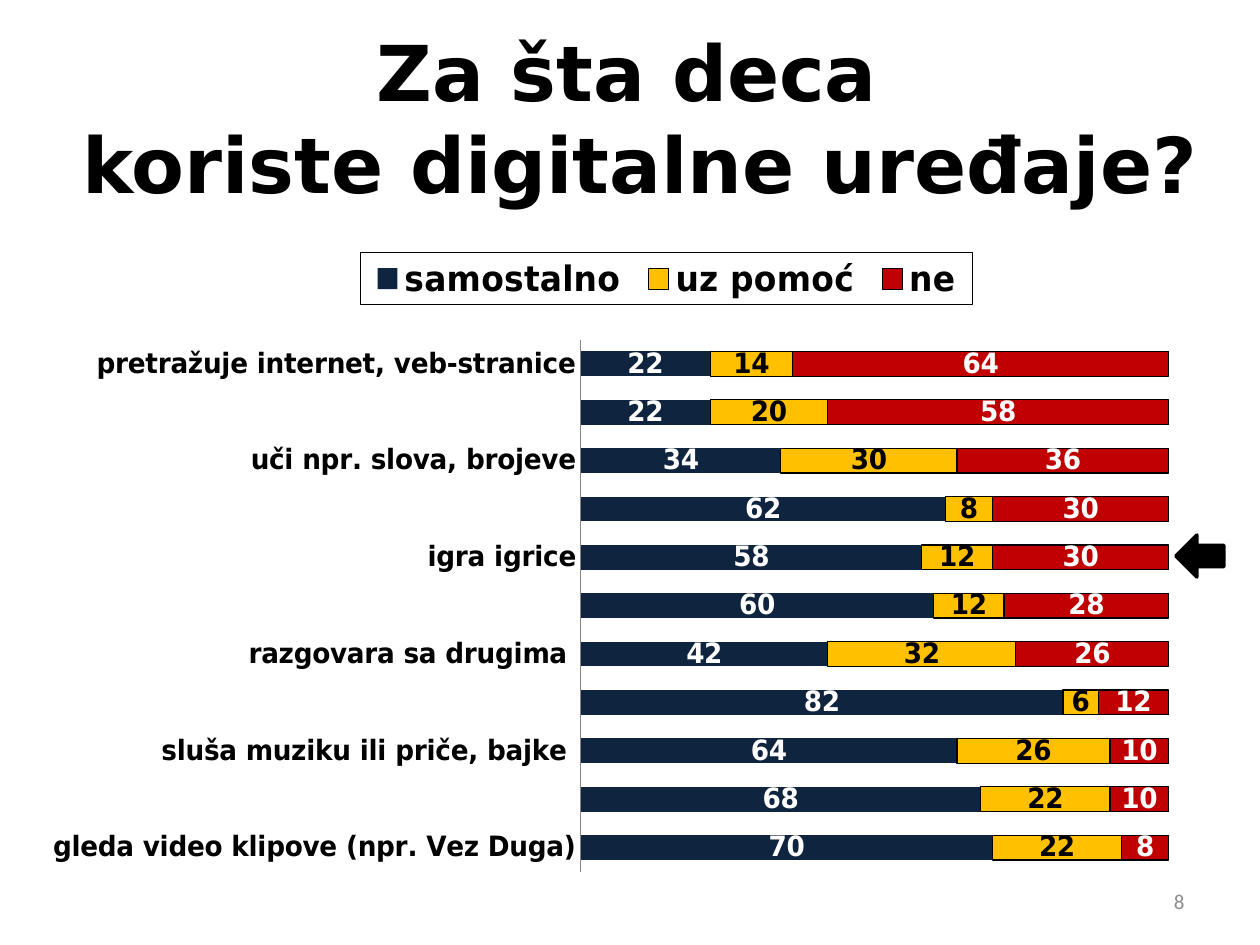
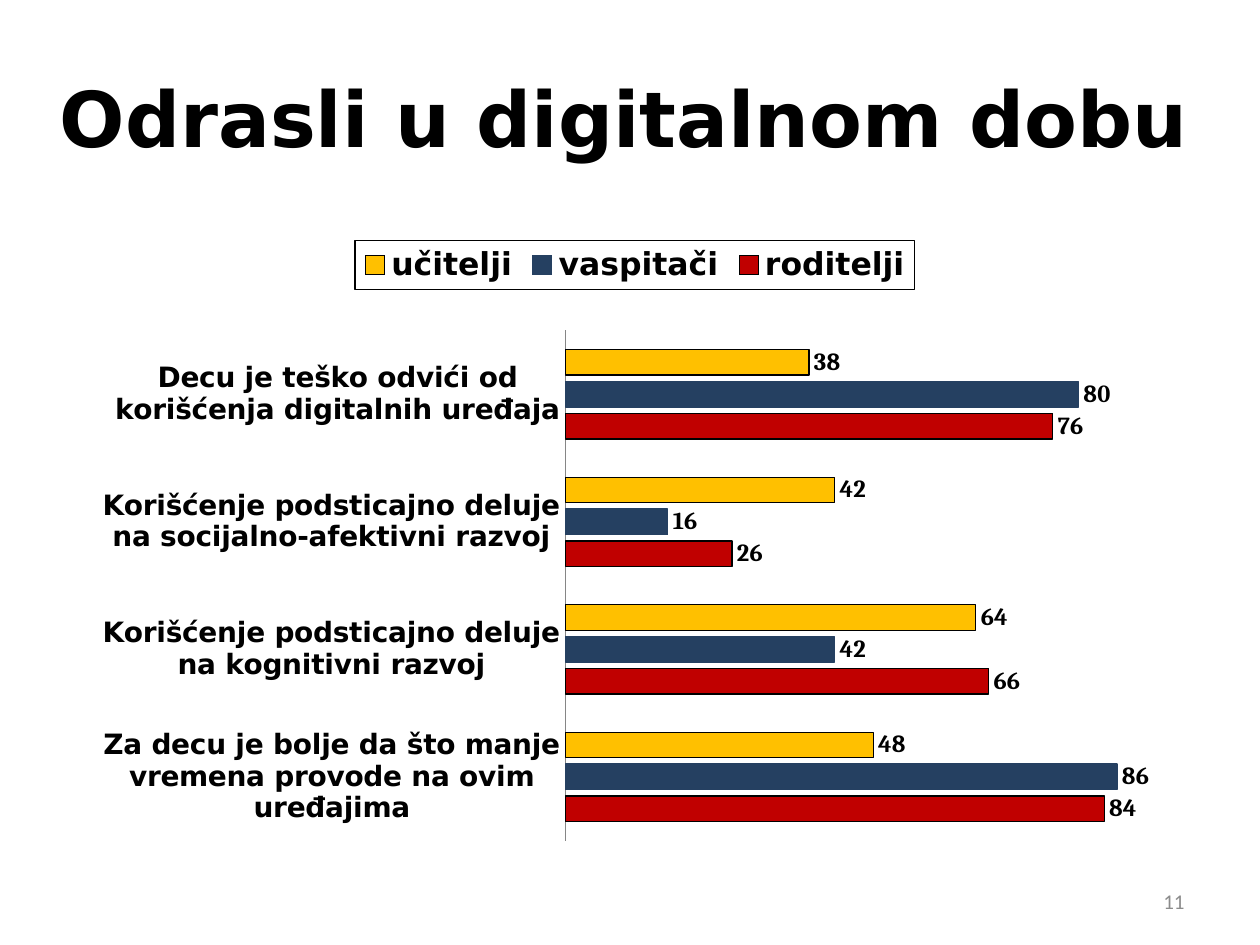
import pptx
import pptx.util
import pptx.chart.data
import pptx.dml.color
import pptx.enum.chart
import pptx.enum.shapes
import pptx.enum.text
import lxml.etree

Pt = pptx.util.Pt
XL = pptx.enum.chart
ALIGN = pptx.enum.text.PP_ALIGN
A = "http://schemas.openxmlformats.org/drawingml/2006/main"
C = "http://schemas.openxmlformats.org/drawingml/2006/chart"

# Shared look
BLACK, WHITE, GREY, AXIS = "000000", "FFFFFF", "8C8C8C", "868686"
NAVY, BLUE, GOLD, RED = "0F243E", "254061", "FFC000", "C00000"
HEAD, BODY, SERIF = "DejaVu Sans", "Calibri", "Cambria"


def px(n):
    return int(n * 914400 / 126)


def rgb(value):
    return pptx.dml.color.RGBColor.from_string(value)


# Series rows: name, values, fill, line, label colour
slides = [
    dict(
        title="Za šta deca \vkoriste digitalne uređaje?", title_box=(63, 38, 1155, 157),
        number="8", chart_box=(53, 221, 1134, 671),
        kind=XL.XL_CHART_TYPE.BAR_STACKED_100, gap=95, overlap=100,
        plot=(0.431, 0.177, 0.552, 0.793),
        legend=(0.224, 0.047, 0.575, 0.078), legend_size=20,
        label=dict(size=Pt(16), name=HEAD), label_at=XL.XL_LABEL_POSITION.CENTER,
        cats=["gleda video klipove (npr. Vez Duga)", "gleda fotografije ili video zapise",
              "sluša muziku ili priče, bajke ", "fotografiše ", "razgovara sa drugima ",
              "snima kamerom", "igra igrice", "crta i/ili boji", "uči npr. slova, brojeve",
              "čita priče (bajke, pesme)", "pretražuje internet, veb-stranice"],
        series=[
            ("samostalno", (70, 68, 64, 82, 42, 60, 58, 62, 34, 22, 22), NAVY, None, WHITE),
            ("uz pomoć", (22, 22, 26, 6, 32, 12, 12, 8, 30, 20, 14), GOLD, BLACK, BLACK),
            ("ne", (8, 10, 10, 12, 26, 28, 30, 30, 36, 58, 64), RED, BLACK, WHITE),
        ],
        arrow=(1176, 535, 48, 42),
    ),
    dict(
        title="Odrasli u digitalnom dobu", title_box=(21, 38, 1207, 157),
        number="11", chart_box=(63, 231, 1144, 630),
        kind=XL.XL_CHART_TYPE.BAR_CLUSTERED, gap=150, overlap=-25,
        plot=(0.439, 0.158, 0.561, 0.81),
        legend=None, legend_size=18,
        label=dict(size=Pt(14), name=SERIF), label_at=XL.XL_LABEL_POSITION.OUTSIDE_END,
        cats=["Za decu je bolje da što manje vremena provode na ovim uređajima",
              "Korišćenje podsticajno deluje na kognitivni razvoj",
              "Korišćenje podsticajno deluje na socijalno-afektivni razvoj",
              "Decu je teško odvići od korišćenja digitalnih uređaja"],
        series=[
            ("roditelji", (84, 66, 26, 76), RED, BLACK, BLACK),
            ("vaspitači", (86, 42, 16, 80), BLUE, BLUE, BLACK),
            ("učitelji", (48, 64, 42, 38), GOLD, BLACK, BLACK),
        ],
        arrow=None,
    ),
]

prs = pptx.Presentation()
prs.slide_width, prs.slide_height = px(1260), px(945)

for d in slides:
    s = prs.slides.add_slide(prs.slide_layouts[6])

    # Title and slide number
    texts = [
        (d["title"], d["title_box"], ALIGN.CENTER, BLACK, dict(size=Pt(44), name=HEAD, bold=True)),
        (d["number"], (903, 876, 294, 50), ALIGN.RIGHT, GREY, dict(size=Pt(12), name=BODY)),
    ]
    for text, box, align, color, font in texts:
        tf = s.shapes.add_textbox(*map(px, box)).text_frame
        tf.word_wrap = True
        tf.vertical_anchor = pptx.enum.text.MSO_ANCHOR.MIDDLE
        p = tf.paragraphs[0]
        p.text = text
        p.alignment = align
        for r in p.runs:
            for key, value in font.items():
                setattr(r.font, key, value)
            r.font.color.rgb = rgb(color)
            if font.get("bold"):
                ln = lxml.etree.Element(f"{{{A}}}ln", w=str(Pt(0.75)))
                fill = lxml.etree.SubElement(ln, f"{{{A}}}solidFill")
                lxml.etree.SubElement(fill, f"{{{A}}}srgbClr", val=BLACK)
                r.font._element.insert(0, ln)

    # Chart
    data = pptx.chart.data.CategoryChartData()
    data.categories = d["cats"]
    for name, values, *_ in d["series"]:
        data.add_series(name, values)
    chart = s.shapes.add_chart(d["kind"], *map(px, d["chart_box"]), data).chart
    chart.has_title = False
    chart.font.size, chart.font.name = Pt(10), BODY
    chart.font.color.rgb = rgb(BLACK)
    plot = chart.plots[0]
    for key, value in dict(gap_width=d["gap"], overlap=d["overlap"], vary_by_categories=False).items():
        setattr(plot, key, value)

    # Bars and their labels
    for ser, (_, _, fill, line, color) in zip(plot.series, d["series"]):
        ser.invert_if_negative = False
        ser.format.fill.solid()
        ser.format.fill.fore_color.rgb = rgb(fill)
        if line:
            ser.format.line.color.rgb = rgb(line)
            ser.format.line.width = Pt(0.75)
        else:
            ser.format.line.fill.background()
        labels = ser.data_labels
        labels.show_value = True
        labels.position = d["label_at"]
        for key, value in dict(d["label"], bold=True).items():
            setattr(labels.font, key, value)
        labels.font.color.rgb = rgb(color)

    # Axes
    cat, val = chart.category_axis, chart.value_axis
    cat.major_tick_mark = XL.XL_TICK_MARK.NONE
    cat.format.line.color.rgb = rgb(AXIS)
    val.visible = val.has_major_gridlines = False
    val.minimum_scale = 0
    val.maximum_scale = 1 if d["kind"] == XL.XL_CHART_TYPE.BAR_STACKED_100 else 100

    # Legend
    chart.has_legend = True
    legend = chart.legend
    legend.position = XL.XL_LEGEND_POSITION.TOP
    legend.include_in_layout = False
    for owner, size in ((cat.tick_labels, 16), (legend, d["legend_size"])):
        for key, value in dict(size=Pt(size), name=HEAD, bold=True).items():
            setattr(owner.font, key, value)
        owner.font.color.rgb = rgb(BLACK)
    if d["kind"] == XL.XL_CHART_TYPE.BAR_CLUSTERED:
        cat._element.find(f"{{{C}}}txPr/{{{A}}}bodyPr").set("rot", "0")
    frame = lxml.etree.Element(f"{{{C}}}spPr")
    ln = lxml.etree.SubElement(frame, f"{{{A}}}ln", w=str(Pt(0.75)))
    fill = lxml.etree.SubElement(ln, f"{{{A}}}solidFill")
    lxml.etree.SubElement(fill, f"{{{A}}}srgbClr", val=BLACK)
    legend._element.find(f"{{{C}}}txPr").addprevious(frame)

    # Fixed places of the plot area and the legend
    area = chart._chartSpace.find(f".//{{{C}}}plotArea")
    for owner, place in ((area, d["plot"]), (legend._element, d["legend"])):
        if not place:
            continue
        for old in owner.findall(f"{{{C}}}layout"):
            owner.remove(old)
        layout = lxml.etree.Element(f"{{{C}}}layout")
        manual = lxml.etree.SubElement(layout, f"{{{C}}}manualLayout")
        if owner is area:
            lxml.etree.SubElement(manual, f"{{{C}}}layoutTarget", val="inner")
        for tag in ("xMode", "yMode"):
            lxml.etree.SubElement(manual, f"{{{C}}}{tag}", val="edge")
        for tag, value in zip("xywh", place):
            lxml.etree.SubElement(manual, f"{{{C}}}{tag}", val=str(value))
        if owner is area:
            owner.insert(0, layout)
        else:
            owner.find(f"{{{C}}}legendPos").addnext(layout)

    # Arrow beside the games bar
    if d["arrow"]:
        sp = s.shapes.add_shape(pptx.enum.shapes.MSO_SHAPE.LEFT_ARROW, *map(px, d["arrow"]))
        sp.shadow.inherit = False
        sp.fill.solid()
        sp.fill.fore_color.rgb = rgb(BLACK)
        sp.line.color.rgb = rgb(BLACK)
        sp.line.width = Pt(2)

prs.save("out.pptx")
